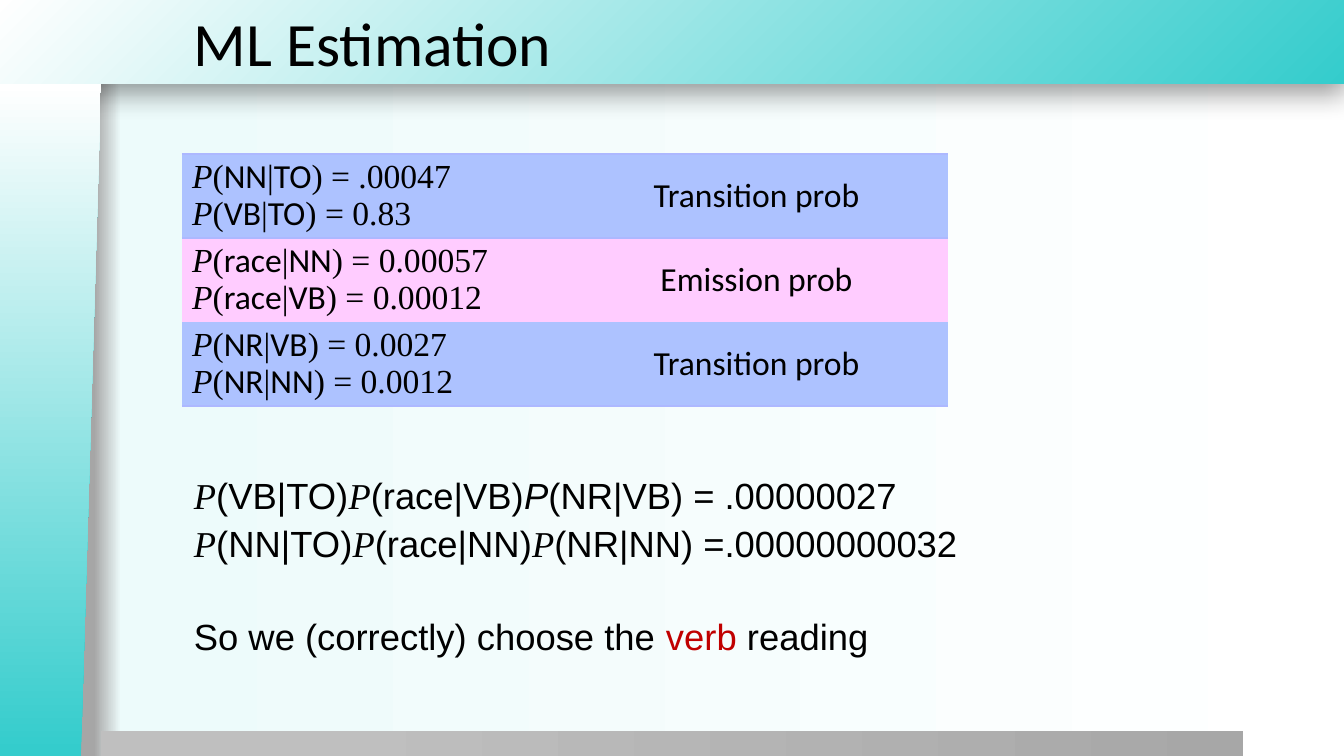
"""Build the ML Estimation slide."""
import pptx
import pptx.util
import pptx.dml.color
import pptx.enum.shapes
import pptx.enum.text
import pptx.oxml
import pptx.oxml.ns
from lxml import etree

RGBColor = pptx.dml.color.RGBColor
KINDS = pptx.enum.shapes.MSO_SHAPE
ALIGN = pptx.enum.text.PP_ALIGN
ANCHOR = pptx.enum.text.MSO_ANCHOR
Pt = pptx.util.Pt
qn = pptx.oxml.ns.qn

BLACK = RGBColor(0x00, 0x00, 0x00)
WHITE = RGBColor(0xFF, 0xFF, 0xFF)
TEAL = RGBColor(0x34, 0xCC, 0xCC)
MIST = RGBColor(0xED, 0xFB, 0xFB)
SHADE = RGBColor(0xA6, 0xA6, 0xA6)
SILVER = RGBColor(0xBF, 0xBF, 0xBF)
GREY = RGBColor(0xA7, 0xA7, 0xA7)
BLUE = RGBColor(0xAD, 0xC2, 0xFF)
EDGE = RGBColor(0xAD, 0xB8, 0xFF)
PINK = RGBColor(0xFF, 0xCC, 0xFF)
RED = RGBColor(0xC0, 0x00, 0x00)

SANS, PLAIN, SERIF = "Calibri", "Arial", "Times New Roman"
NO_STYLE = "{2D5ABB26-0587-4C30-8999-92F81FD0307C}"


def px(count):
    """Turn pixels into EMU."""
    return round(count * 914400 / 100.8)


def add(parent, tag, **attrs):
    """Append a child element with attributes."""
    return etree.SubElement(parent, qn(tag), {key: str(val) for key, val in attrs.items()})


class Deck:
    """Hold the style and the current slide."""

    def __init__(self):
        """Open a blank slide."""
        self.show = pptx.Presentation()
        self.show.slide_width, self.show.slide_height = px(1344), px(756)
        self.slide = self.show.slides.add_slide(self.show.slide_layouts[6])
        self.shapes = self.slide.shapes

    def blend(self, fill, host, stops, round_fill=False):
        """Fill a host with a gradient."""
        fill.gradient()
        grad = next(host.iter(qn("a:gradFill")))
        for child in list(grad):
            grad.remove(child)
        grad.set("rotWithShape", "1")
        group = add(grad, "a:gsLst")
        for place, color in stops:
            add(add(group, "a:gs", pos=place * 1000), "a:srgbClr", val=color)
        if round_fill:
            add(add(grad, "a:path", path="circle"), "a:fillToRect", l=100000, t=100000)
        else:
            add(grad, "a:lin", ang=0, scaled=0)

    def ground(self, stops):
        """Paint the background."""
        self.blend(self.slide.background.fill, self.slide.element, stops)

    def block(self, box, stops, kind=KINDS.RECTANGLE, round_fill=False):
        """Add a gradient shape."""
        shape = self.shapes.add_shape(kind, *map(px, box))
        shape.shadow.inherit = False
        shape.line.fill.background()
        self.blend(shape.fill, shape.element, stops, round_fill)
        return shape

    def shade(self, shape):
        """Cast a soft shadow downwards."""
        glow = add(next(shape.element.iter(qn("a:effectLst"))), "a:outerShdw",
                   blurRad=Pt(20), dist=Pt(6), dir=5400000, algn="t", rotWithShape=0)
        add(add(glow, "a:srgbClr", val=BLACK), "a:alpha", val=40000)

    def pour(self, frame, lines, size, align=ALIGN.LEFT, space=None, gaps=()):
        """Fill a frame with lines of (text, font, slant, color) runs."""
        frame.word_wrap = True
        for row, parts in enumerate(lines):
            para = frame.paragraphs[0] if row == 0 else frame.add_paragraph()
            para.alignment, para.line_spacing = align, space
            if gaps:
                para.space_before = Pt(gaps[row])
            for text, face, slant, color in parts:
                run = para.add_run()
                run.text = text
                font = run.font
                font.name, font.size, font.italic = face, Pt(size), slant
                font.color.rgb = color

    def text(self, box, lines, size, anchor=ANCHOR.TOP, **style):
        """Add a text box."""
        frame = self.shapes.add_textbox(*map(px, box)).text_frame
        frame.vertical_anchor = anchor
        self.pour(frame, lines, size, **style)

    def rule(self, cell, tags):
        """Draw cell borders."""
        props = cell._tc.get_or_add_tcPr()
        for spot, tag in enumerate(tags):
            line = add(props, tag, w=Pt(1))
            add(add(line, "a:solidFill"), "a:srgbClr", val=EDGE)
            props.insert(spot, line)

    def table(self, box, rows):
        """Add a table of (formulas, label, fill, borders) rows."""
        frame = self.shapes.add_table(len(rows), 2, *map(px, box))
        table = frame.table
        table.first_row = table.horz_banding = False
        next(frame.element.iter(qn("a:tableStyleId"))).text = NO_STYLE
        for row, (sums, label, color, tags) in zip(table.rows, rows):
            left, right = row.cells
            self.pour(left.text_frame, sums, 24, space=0.9)
            self.pour(right.text_frame, [[(label, SANS, False, BLACK)]], 24, ALIGN.CENTER)
            for cell in (left, right):
                cell.vertical_anchor = ANCHOR.MIDDLE
                cell.fill.solid()
                cell.fill.fore_color.rgb = color
                self.rule(cell, tags)


def odds(event, given, value):
    """Give the runs of one table formula."""
    bits = [("P", SERIF), ("(", SERIF), (event, SANS), ("|", SERIF),
            (given, SANS), (f") = {value}", SERIF)]
    return [(text, face, text == "P", BLACK) for text, face in bits]


def chain(terms, last=SERIF):
    """Give the runs of a product of terms."""
    faces = [SERIF] * (len(terms) - 1) + [last]
    return [run for term, face in zip(terms, faces)
            for run in (("P", face, True, BLACK), (term, PLAIN, False, BLACK))]


def main():
    """Draw the slide and save it."""
    deck = Deck()
    deck.ground([(7, SHADE), (9, MIST), (100, WHITE)])
    banner = deck.block((-1, 0, 1345, 84), [(0, TEAL), (100, WHITE)], round_fill=True)
    deck.shade(banner)
    deck.block((101, 731, 1142, 26), [(20, SILVER), (100, GREY)])
    side = deck.block((-286, 370, 673, 101), [(1, TEAL), (100, WHITE)],
                      KINDS.FLOWCHART_MANUAL_INPUT)
    side.rotation = 270
    next(side.element.iter(qn("a:xfrm"))).set("flipV", "1")

    deck.text((184, 0, 1160, 84), [[("ML Estimation", SANS, False, BLACK)]], 44,
              ANCHOR.MIDDLE)
    choice = [("So we (correctly) choose the ", BLACK), ("verb", RED), (" reading", BLACK)]
    deck.text((184, 473, 1058, 192), [
        chain(["(VB|TO)", "(race|VB)", "(NR|VB) = .00000027"], PLAIN),
        chain(["(NN|TO)", "(race|NN)", "(NR|NN) =.00000000032"]),
        [(text, PLAIN, False, color) for text, color in choice],
    ], 26, space=0.9, gaps=(6, 6, 39))
    deck.table((182, 154, 766, 252), [
        ([odds("NN", "TO", ".00047"), odds("VB", "TO", "0.83")],
         "Transition prob", BLUE, ["a:lnT", "a:lnB"]),
        ([odds("race", "NN", "0.00057"), odds("race", "VB", "0.00012")],
         "Emission prob", PINK, []),
        ([odds("NR", "VB", "0.0027"), odds("NR", "NN", "0.0012")],
         "Transition prob", BLUE, ["a:lnB"]),
    ])
    deck.show.save("out.pptx")


if __name__ == "__main__":
    main()
